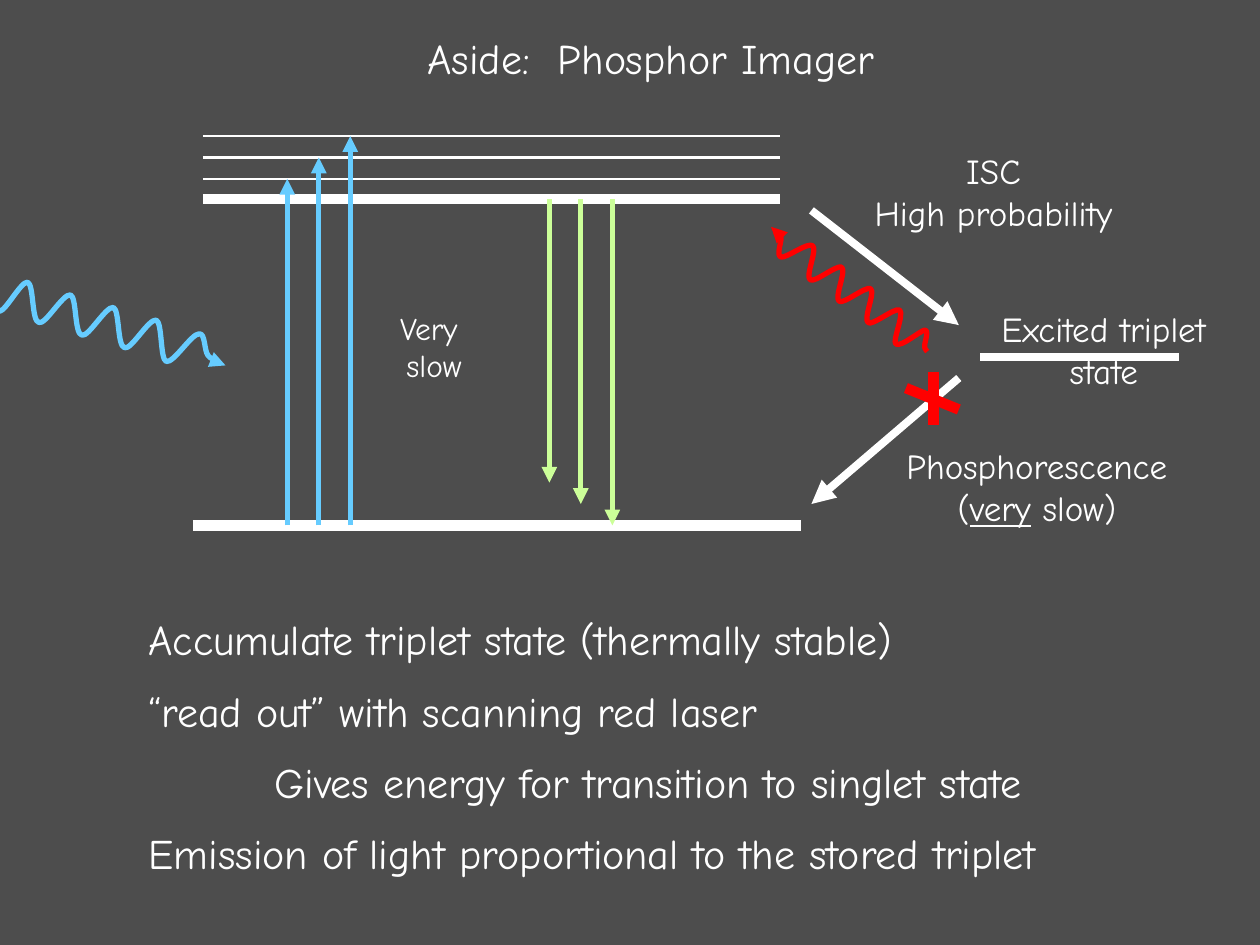
from collections import namedtuple
from lxml import etree
from pptx import Presentation
from pptx import util as u
from pptx.dml.color import RGBColor
from pptx.enum import shapes, text
from pptx.oxml import ns

PX = 9144  # 100 px to the inch
FONT = "Comic Neue"
GREY = RGBColor(0x4D, 0x4D, 0x4D)
WHITE = RGBColor(0xFF, 0xFF, 0xFF)
BLUE = RGBColor(0x66, 0xCC, 0xFF)
GREEN = RGBColor(0xCC, 0xFF, 0x99)
RED = RGBColor(0xFF, 0x00, 0x00)

Box = namedtuple("Box", "left top width height")


def add_line(page, start, end, color, weight, arrow=False):
    points = [v * PX for v in (*start, *end)]
    line = page.shapes.add_connector(shapes.MSO_CONNECTOR.STRAIGHT, *points)
    line.line.color.rgb = color
    line.line.width = u.Pt(weight)
    properties = line.element.spPr
    if arrow:
        etree.SubElement(properties.find(ns.qn("a:ln")), ns.qn("a:tailEnd"), type="triangle")
    etree.SubElement(properties, ns.qn("a:effectLst"))


def add_text(page, box, paras, size, align=text.PP_ALIGN.CENTER, before=0):
    """Each paragraph is a list of (words, underlined) spans."""
    label = page.shapes.add_textbox(*(v * PX for v in box))
    frame = label.text_frame
    frame.word_wrap = False
    frame.auto_size = text.MSO_AUTO_SIZE.SHAPE_TO_FIT_TEXT
    frame.vertical_anchor = text.MSO_ANCHOR.MIDDLE
    for i, spans in enumerate(paras):
        para = frame.paragraphs[0] if i == 0 else frame.add_paragraph()
        para.alignment = align
        para.space_before = u.Pt(before)
        for words, underlined in spans:
            span = para.add_run()
            span.text = words
            span.font.name = FONT
            span.font.size = u.Pt(size)
            span.font.color.rgb = WHITE
            if underlined:
                span.font.underline = True
    # Tab stops one inch apart
    for settings in label.element.iter(ns.qn("a:pPr")):
        settings.set("defTabSz", str(100 * PX))


def plain(*lines):
    return [[(line, False)] for line in lines]


def add_wave(page, start, curves, color):
    """Draw Bezier curves, each given as three points relative to its start."""
    x, y = start
    points = []
    for curve in curves:
        points += [(x + dx, y + dy) for dx, dy in zip(curve[::2], curve[1::2])]
        x, y = points[-1]
    builder = page.shapes.build_freeform(*start, scale=PX)
    builder.add_line_segments(points, close=False)
    wave = builder.convert_to_shape()
    wave.shadow.inherit = False
    wave.fill.background()
    wave.line.color.rgb = color
    wave.line.width = u.Pt(3)
    # Join every three straight segments into one curve
    segments = list(wave.element.iter(ns.qn("a:lnTo")))
    for i in range(0, len(segments), 3):
        bend = etree.Element(ns.qn("a:cubicBezTo"))
        segments[i].addprevious(bend)
        for segment in segments[i:i + 3]:
            bend.append(segment[0])
            segment.getparent().remove(segment)


def energy_levels(page, box):
    left, top, width, height = box
    right, bottom, band = left + width, top + height, top + 50
    add_line(page, (left - 8, bottom), (right + 17, bottom), WHITE, 6)
    add_line(page, (left, band), (right, band), WHITE, 6)
    levels = [top + 34, top + 17, top]
    for y in levels:
        add_line(page, (left, y), (right, y), WHITE, 1.5)
    # Absorption, then emission
    for i, y in enumerate(levels):
        x = left + 67 + 25 * i
        add_line(page, (x, bottom), (x, y), BLUE, 3, arrow=True)
    for i in range(3):
        x = left + 275 + 25 * i
        add_line(page, (x, band), (x, bottom - 17 * (2 - i)), GREEN, 3, arrow=True)
    add_text(page, Box(left + 142, top + 127, 83, 80), plain("Very ", "slow"), 18)


def incoming_light(page, box):
    head = [(0, 1, 2, 0, 4, 3), (1, 3, 1, 17, 5, 16), (5, -1, 17, -24, 22, -23)]
    cycle = [(5, 2, 3, 31, 9, 32), (5, 2, 19, -23, 25, -22)]
    end = [(5, 2, 3, 31, 8, 33), (6, 1, 20, -22, 26, -22),
           (5, -1, 4, 13, 7, 17), (2, 3, 5, 3, 7, 4)]
    add_wave(page, (box.left, box.top), head + cycle * 3 + end, BLUE)
    right, bottom = box.left + box.width, box.top + box.height
    add_line(page, (right - 10, bottom - 4), (right, bottom), BLUE, 3, arrow=True)


def red_laser(page, box):
    head = [(0, -1, -2, -1, -2, -3), (-1, -3, 4, -14, 0, -14),
            (-3, 0, -19, 14, -23, 11), (-3, -2, 7, -24, 3, -27)]
    cycle = [(-4, -2, -22, 13, -25, 10), (-4, -3, 6, -24, 2, -27)]
    end = [(-4, -3, -21, 10, -25, 9), (-4, -1, 0, -11, 0, -15), (-1, -3, -4, -4, -5, -5)]
    start = box.left + box.width, box.top + box.height
    add_wave(page, start, head + cycle * 3 + end, RED)
    add_line(page, (box.left + 6, box.top + 6), (box.left, box.top), RED, 3, arrow=True)


def triplet_state(page, box):
    left, top = box.left, box.top
    # Crossing, triplet level and phosphorescence
    add_line(page, (left, top + 59), (left + 117, top + 150), WHITE, 4.5, arrow=True)
    add_line(page, (left + 134, top + 175), (left + 292, top + 175), WHITE, 4.5)
    add_line(page, (left + 117, top + 192), (left, top + 292), WHITE, 4.5, arrow=True)
    labels = [
        (Box(left + 30, top, 229, 88), plain("ISC", "High probability")),
        (Box(left + 125, top + 125, 214, 88), plain("Excited triplet", "state")),
        (Box(left + 59, top + 234, 240, 88),
         plain("Phosphorescence") + [[("(", False), ("very", True), (" slow)", False)]]),
    ]
    for place, paras in labels:
        add_text(page, place, paras, 20)
    # Cross over the slow path
    add_line(page, (left + 75, top + 200), (left + 117, top + 217), RED, 6)
    add_line(page, (left + 97, top + 187), (left + 97, top + 229), RED, 6)


def title(page, box):
    add_text(page, box, plain("Aside:  Phosphor Imager"), 24, before=12)


def notes_text(page, box):
    paras = plain("Accumulate triplet state (thermally stable)",
                  "“read out” with scanning red laser",
                  "\tGives energy for transition to singlet state",
                  "Emission of light proportional to the stored triplet")
    add_text(page, box, paras, 24, align=text.PP_ALIGN.LEFT, before=12)


def main():
    deck = Presentation()
    deck.slide_width, deck.slide_height = 1000 * PX, 750 * PX
    page = deck.slides.add_slide(deck.slide_layouts[6])
    page.background.fill.solid()
    page.background.fill.fore_color.rgb = GREY
    incoming_light(page, Box(-9, 228, 188, 62))
    energy_levels(page, Box(161, 108, 458, 309))
    title(page, Box(316, 17, 401, 57))
    triplet_state(page, Box(644, 108, 339, 322))
    notes_text(page, Box(108, 459, 808, 266))
    red_laser(page, Box(612, 180, 124, 99))
    deck.save("out.pptx")


if __name__ == "__main__":
    main()
